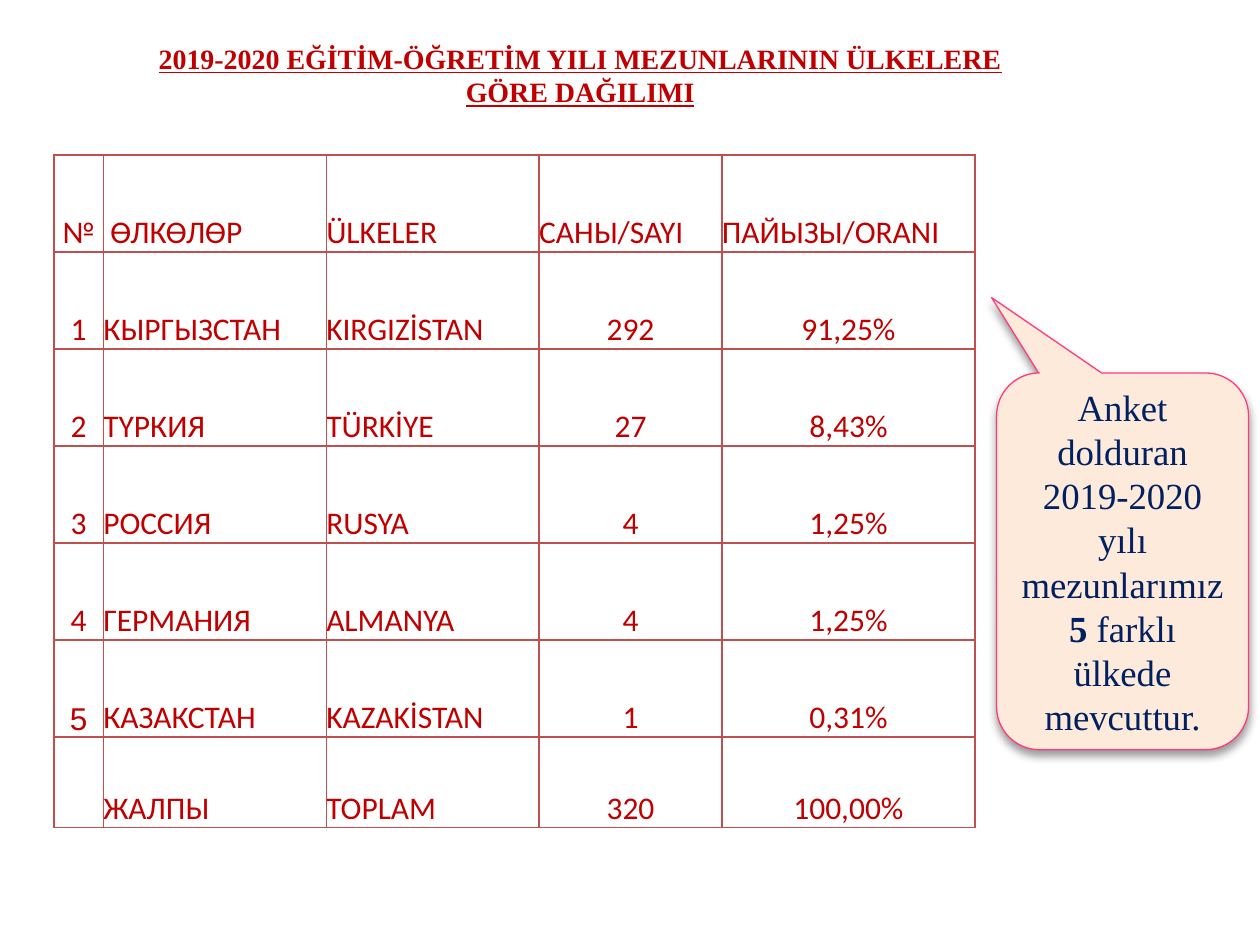
from lxml.etree import SubElement as Sub
from pptx import Presentation
from pptx.dml.color import RGBColor as Rgb
from pptx.enum.shapes import MSO_SHAPE as Shape
from pptx.enum.text import MSO_ANCHOR as Anchor, PP_ALIGN as Align
from pptx.oxml.ns import qn
from pptx.util import Inches, Pt

HUES = {"red": "C00000", "rule": "C0504D", "navy": "002060",
        "peach": "FDEADA", "pink": "FF3B7C", "black": "000000"}
SERIF = "Times New Roman"

# The slide is a grid of 1000 columns by 750 rows
COLS, ROWS = 1000, 750
WIDE, HIGH = Inches(10), Inches(7.5)

HEAD = "2019-2020 EĞİTİM-ÖĞRETİM YILI MEZUNLARININ ÜLKELERE GÖRE DAĞILIMI"
DATA = [
    ("№", " ӨЛКӨЛӨР", "ÜLKELER", "САНЫ/SAYI", "ПАЙЫЗЫ/ORANI"),
    ("1", "КЫРГЫЗСТАН", "KIRGIZİSTAN", "292", "91,25%"),
    ("2", "ТҮРКИЯ", "TÜRKİYE", "27", "8,43%"),
    ("3", "РОССИЯ", "RUSYA", "4", "1,25%"),
    ("4", "ГЕРМАНИЯ", "ALMANYA", "4", "1,25%"),
    ("5", "КАЗАКСТАН", "KAZAKİSTAN", "1", "0,31%"),
    ("", "ЖАЛПЫ", "TOPLAM", "320", "100,00%"),
]
NOTE = [[("Anket dolduran 2019-2020 yılı mezunlarımız", False)],
        [("5 ", True), ("farklı ülkede", False)],
        [("mevcuttur.", False)]]


def across(n):
    return round(WIDE * n / COLS)


def down(n):
    return round(HIGH * n / ROWS)


def place(box):
    x, y, w, h = box
    return across(x), down(y), across(w), down(h)


def hue(name):
    return Rgb.from_string(HUES[name])


def style(para, size, face, name, align=Align.CENTER):
    para.alignment = align
    font = para.font
    font.size, font.name = Pt(size), face
    font.color.rgb = hue(name)
    return font


def paint(parent, name):
    fill = Sub(parent, qn("a:solidFill"))
    return Sub(fill, qn("a:srgbClr"), val=HUES[name])


def shade(shape):
    """Soft shadow straight below the shape."""
    shape.shadow.inherit = False
    fx = shape._element.spPr.find(qn("a:effectLst"))
    cast = Sub(fx, qn("a:outerShdw"), blurRad=str(Pt(5.2)), dist=str(Pt(3)),
               dir="5400000", rotWithShape="0")
    tone = Sub(cast, qn("a:srgbClr"), val=HUES["black"])
    Sub(tone, qn("a:alpha"), val="40000")


def frame(cell):
    """Thin rule on all four sides of a cell."""
    props = cell._tc.get_or_add_tcPr()
    for side in ("lnL", "lnR", "lnT", "lnB"):
        paint(Sub(props, qn("a:" + side), w=str(Pt(1))), "rule")


def add_note(slide, box):
    note = slide.shapes.add_shape(Shape.ROUNDED_RECTANGULAR_CALLOUT, *place(box))
    for i, value in enumerate((-0.52, -0.7, 0.17)):
        note.adjustments[i] = value
    note.fill.solid()
    note.fill.fore_color.rgb = hue("peach")
    note.line.color.rgb = hue("pink")
    note.line.width = Pt(0.75)
    shade(note)
    text = note.text_frame
    text.word_wrap, text.vertical_anchor = True, Anchor.MIDDLE
    for i, runs in enumerate(NOTE):
        para = text.add_paragraph() if i else text.paragraphs[0]
        style(para, 21, SERIF, "navy")
        for words, bold in runs:
            run = para.add_run()
            run.text, run.font.bold = words, bold


def add_head(slide, box):
    text = slide.shapes.add_textbox(*place(box)).text_frame
    text.word_wrap = True
    para = text.paragraphs[0]
    para.text = HEAD
    font = style(para, 16, SERIF, "red")
    font.bold = font.underline = True


def add_grid(slide, box):
    shape = slide.shapes.add_table(len(DATA), len(DATA[0]), *place(box))
    table = shape.table
    table.first_row = table.horz_banding = False
    for col, w in zip(table.columns, (39, 177, 169, 145, 201)):
        col.width = across(w)
    # Equal rows, with a slightly lower total row
    for r, row in enumerate(table.rows):
        row.height = down(77 if r < len(DATA) - 1 else 72)
    for r, line in enumerate(DATA):
        for c, words in enumerate(line):
            cell = table.cell(r, c)
            frame(cell)
            cell.fill.background()
            cell.vertical_anchor = Anchor.BOTTOM
            cell.margin_left = cell.margin_right = 0
            cell.margin_top = cell.margin_bottom = 0
            para = cell.text_frame.paragraphs[0]
            para.text = words
            mid = c == 0 or (r > 0 and c > 2)
            face = "Arial" if words == "5" else "Calibri"
            style(para, 18, face, "red", Align.CENTER if mid else Align.LEFT)


def main():
    deck = Presentation()
    deck.slide_width, deck.slide_height = WIDE, HIGH
    slide = deck.slides.add_slide(deck.slide_layouts[6])
    add_note(slide, (791, 296, 200, 299))
    add_head(slide, (114, 28, 693, 64))
    add_grid(slide, (43, 123, 732, 535))
    deck.save("out.pptx")


if __name__ == "__main__":
    main()
